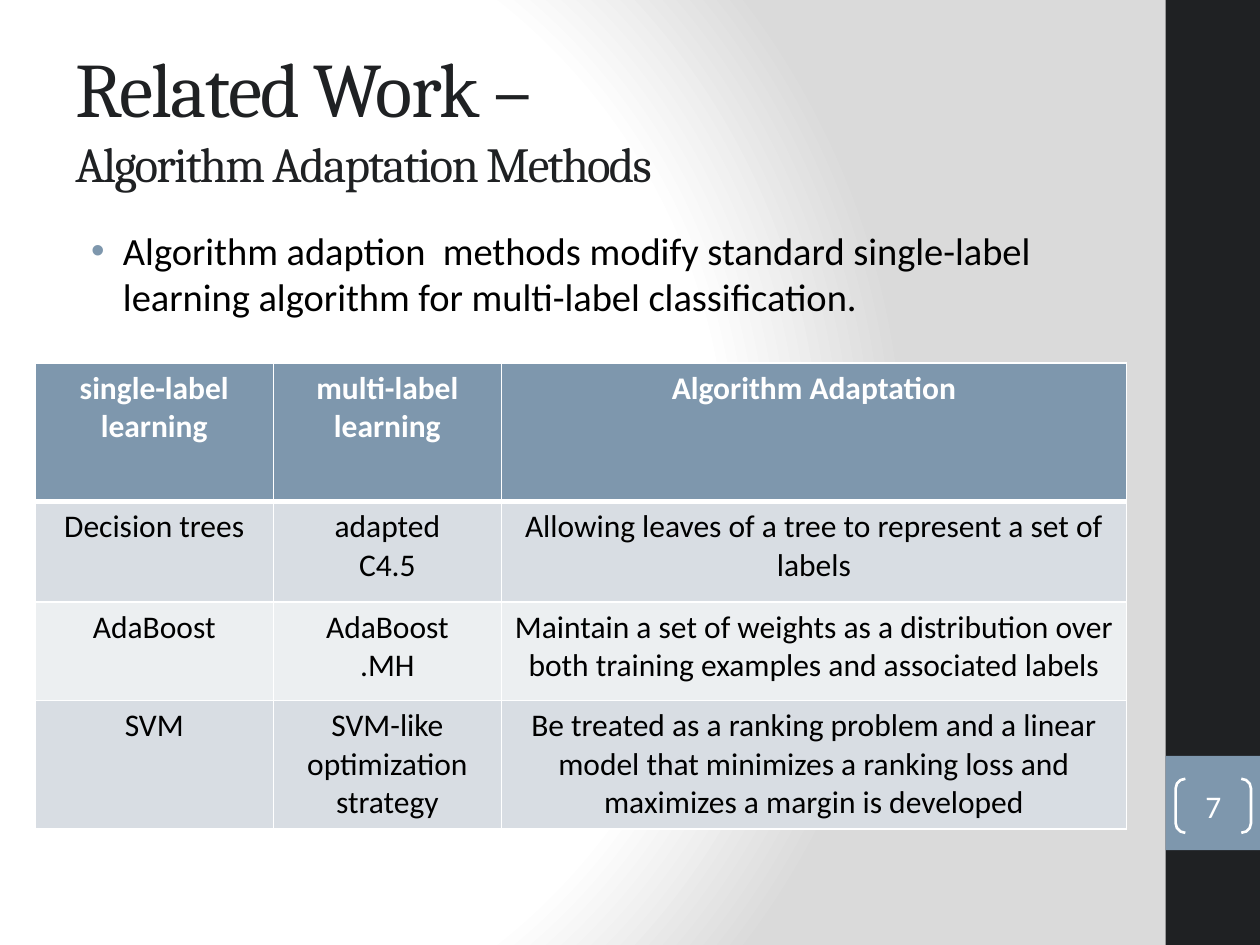
import pptx
import pptx.dml.color
import pptx.enum.shapes
import pptx.enum.text
import pptx.oxml
import pptx.oxml.ns
import pptx.util
from lxml import etree

Cm, Pt = pptx.util.Cm, pptx.util.Pt
MSO_SHAPE = pptx.enum.shapes.MSO_SHAPE
ALIGN = pptx.enum.text.PP_ALIGN
ANCHOR = pptx.enum.text.MSO_ANCHOR
qn = pptx.oxml.ns.qn

# Content: a paragraph is a list of lines
HEADING = [["Related Work – ", "Algorithm Adaptation Methods"]]
SUMMARY = [["Algorithm adaption  methods modify standard single-label "
            "learning algorithm for multi-label classification."]]
PAGE = [["7"]]
METHODS = [
    ["single-label learning", "multi-label learning", "Algorithm Adaptation"],
    ["Decision trees", "adapted\nC4.5",
     "Allowing leaves of a tree to represent a set of labels"],
    ["AdaBoost", "AdaBoost\n.MH",
     "Maintain a set of weights as a distribution over both training "
     "examples and associated labels"],
    ["SVM", "SVM-like optimization strategy",
     "Be treated as a ranking problem and a linear model that minimizes a "
     "ranking loss and maximizes a margin is developed"],
]
COLUMN_WIDTHS = [4.8, 4.6, 12.6]
ROW_HEIGHTS = [2.79, 2.03, 1.98, 2.59]

THEME = {
    "dark": "1F2123", "accent": "7E97AD", "white": "FFFFFF", "black": "000000",
    "shade": "DADADA", "bands": ["D8DDE3", "ECEFF1"],
    "heading_font": "Cambria", "body_font": "Calibri",
    "heading_sizes": [44, 28], "summary_size": 22, "small_size": 18,
}
NAMESPACE = 'xmlns:a="http://schemas.openxmlformats.org/drawingml/2006/main"'


def rgb(color):
    return pptx.dml.color.RGBColor.from_string(color)


def xml(markup):
    """Parse DrawingML whose root tag ends in a {ns} mark."""
    return pptx.oxml.parse_xml(markup.replace("{ns}", NAMESPACE))


def write(frame, paragraphs, sizes, color, font=THEME["body_font"], bold=False,
          align=ALIGN.LEFT, anchor=ANCHOR.TOP, tracking=None):
    """Fill a text frame; sizes gives one type size per line of a paragraph."""
    frame.word_wrap = True
    frame.vertical_anchor = anchor
    for number, lines in enumerate(paragraphs):
        paragraph = frame.add_paragraph() if number else frame.paragraphs[0]
        paragraph.alignment = align
        for position, (line, size) in enumerate(zip(lines, sizes)):
            if position:
                paragraph.add_line_break()
            run = paragraph.add_run()
            run.text = line
            run.font.name = font
            run.font.size = Pt(size)
            run.font.bold = bold
            run.font.color.rgb = rgb(color)
            if tracking is not None:
                run.font._element.set("spc", str(tracking * 100))


def add_box(slide, kind, left, top, width, height, fill=None):
    box = slide.shapes.add_shape(kind, Cm(left), Cm(top), Cm(width), Cm(height))
    box.shadow.inherit = False
    box.line.fill.background()
    if fill:
        box.fill.solid()
        box.fill.fore_color.rgb = rgb(fill)
    else:
        box.fill.background()
    return box


def set_background(slide):
    slide.background.fill.gradient()
    gradient = next(slide.element.iter(qn("a:gradFill")))
    stops = "".join(
        f'<a:gs pos="{place * 1000}"><a:srgbClr val="{THEME[color]}"/></a:gs>'
        for place, color in [(0, "white"), (75, "white"), (100, "shade")])
    gradient.getparent().replace(gradient, xml(
        f'<a:gradFill {{ns}} rotWithShape="1"><a:gsLst>{stops}</a:gsLst>'
        '<a:path path="circle"><a:fillToRect l="20000" t="50000" '
        'r="100000" b="50000"/></a:path></a:gradFill>'))


def set_borders(cell, top, bottom):
    properties = cell._tc.get_or_add_tcPr()
    sides = [("L", 1), ("R", 1), ("T", top), ("B", bottom)]
    for place, (side, width) in enumerate(sides):
        properties.insert(place, xml(
            f'<a:ln{side} {{ns}} w="{Pt(width)}"><a:solidFill>'
            f'<a:srgbClr val="{THEME["white"]}"/></a:solidFill></a:ln{side}>'))


def add_side_panel(slide):
    add_box(slide, MSO_SHAPE.RECTANGLE, 23.5, 0, 1.9, 19.05, THEME["dark"])
    add_box(slide, MSO_SHAPE.RECTANGLE, 23.5, 15.24, 1.9, 1.9, THEME["accent"])
    bracket = add_box(slide, MSO_SHAPE.DOUBLE_BRACKET, 23.7, 15.7, 1.52, 1.09)
    bracket.adjustments[0] = 0.18
    bracket.line.color.rgb = rgb(THEME["white"])
    bracket.line.width = Pt(1.5)
    frame = bracket.text_frame
    frame.margin_left = frame.margin_right = 0
    frame.margin_top = frame.margin_bottom = 0
    write(frame, PAGE, [THEME["small_size"]], THEME["white"],
          align=ALIGN.CENTER, anchor=ANCHOR.MIDDLE)


def add_heading(slide):
    heading = slide.shapes.add_textbox(Cm(1.27), Cm(0.76), Cm(21.16), Cm(3.18))
    write(heading.text_frame, HEADING, THEME["heading_sizes"], THEME["dark"],
          font=THEME["heading_font"], anchor=ANCHOR.MIDDLE, tracking=-1)


def add_summary(slide):
    summary = slide.shapes.add_textbox(Cm(1.27), Cm(4.45), Cm(21.16), Cm(13.33))
    write(summary.text_frame, SUMMARY, [THEME["summary_size"]], THEME["black"])
    for paragraph in summary.text_frame.paragraphs:
        paragraph.space_before = Pt(4.4)
        properties = paragraph._p.get_or_add_pPr()
        properties.set("marL", str(Cm(0.96)))
        properties.set("indent", str(Cm(-0.64)))
        color = etree.SubElement(properties, qn("a:buClr"))
        etree.SubElement(color, qn("a:srgbClr"), val=THEME["accent"])
        etree.SubElement(properties, qn("a:buFont"), typeface="Arial")
        etree.SubElement(properties, qn("a:buChar"), char="•")


def add_methods(slide):
    table = slide.shapes.add_table(
        len(ROW_HEIGHTS), len(COLUMN_WIDTHS), Cm(0.71), Cm(7.32),
        Cm(sum(COLUMN_WIDTHS)), Cm(sum(ROW_HEIGHTS))).table
    for column, width in zip(table.columns, COLUMN_WIDTHS):
        column.width = Cm(width)
    for row, height in zip(table.rows, ROW_HEIGHTS):
        row.height = Cm(height)
    for r, entries in enumerate(METHODS):
        header = r == 0
        fill = THEME["accent"] if header else THEME["bands"][(r - 1) % 2]
        for c, entry in enumerate(entries):
            cell = table.cell(r, c)
            cell.fill.solid()
            cell.fill.fore_color.rgb = rgb(fill)
            set_borders(cell, top=3 if r == 1 else 1, bottom=3 if header else 1)
            write(cell.text_frame, [[line] for line in entry.split("\n")],
                  [THEME["small_size"]],
                  THEME["white"] if header else THEME["black"],
                  bold=header, align=ALIGN.CENTER)


def main():
    deck = pptx.Presentation()
    deck.slide_width, deck.slide_height = Cm(25.4), Cm(19.05)
    slide = deck.slides.add_slide(deck.slide_layouts[6])
    set_background(slide)
    add_side_panel(slide)
    add_heading(slide)
    add_summary(slide)
    add_methods(slide)
    deck.save("out.pptx")


if __name__ == "__main__":
    main()
